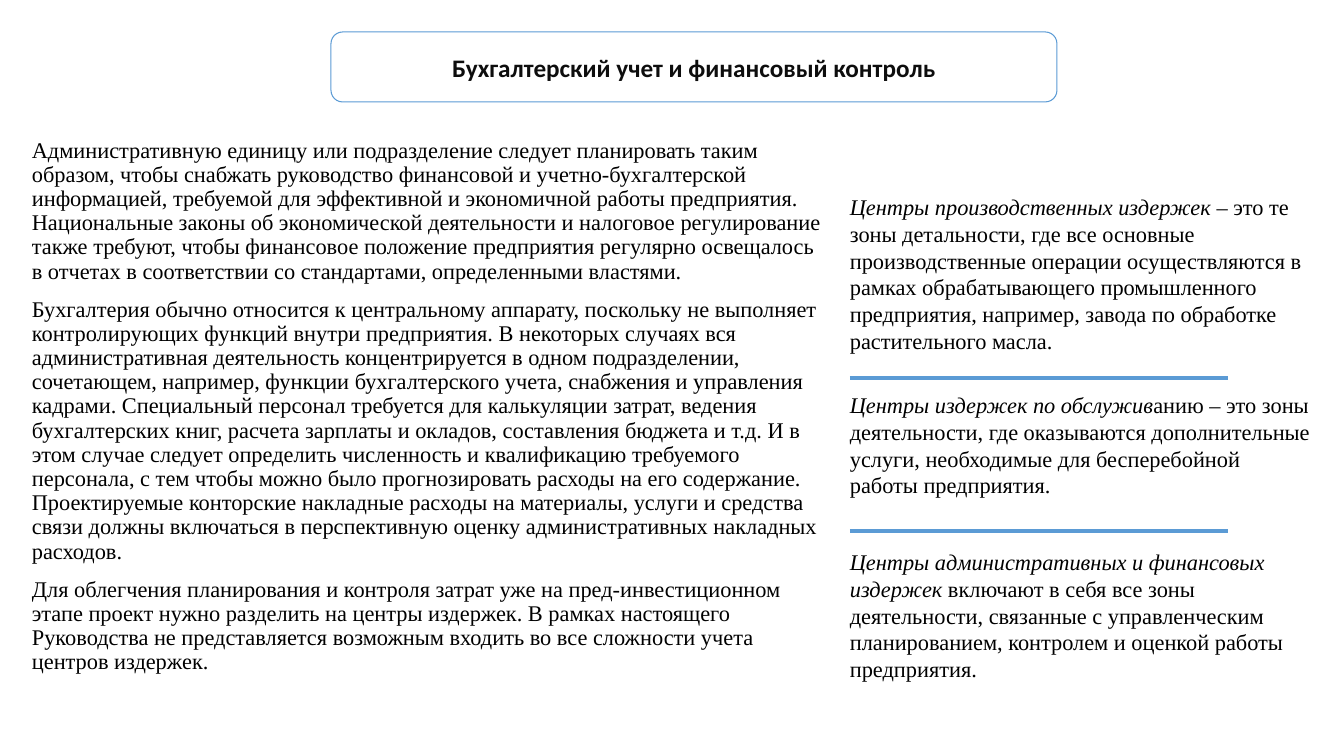
from lxml import etree
from pptx import Presentation
from pptx import util as u
from pptx.dml.color import RGBColor
from pptx.enum import shapes, text
from pptx.oxml.ns import qn

# Content
TITLE = "Бухгалтерский учет и финансовый контроль"
BODY = [
    "Административную единицу или подразделение следует планировать таким образом, чтобы снабжать "
    "руководство финансовой и учетно-бухгалтерской информацией, требуемой для эффективной и "
    "экономичной работы предприятия. Национальные законы об экономической деятельности и налоговое "
    "регулирование также требуют, чтобы финансовое положение предприятия регулярно освещалось в "
    "отчетах в соответствии со стандартами, определенными властями.",
    "Бухгалтерия обычно относится к центральному аппарату, поскольку не выполняет контролирующих "
    "функций внутри предприятия. В некоторых случаях вся административная деятельность "
    "концентрируется в одном подразделении, сочетающем, например, функции бухгалтерского учета, "
    "снабжения и управления кадрами. Специальный персонал требуется для калькуляции затрат, ведения "
    "бухгалтерских книг, расчета зарплаты и окладов, составления бюджета и т.д. И в этом случае "
    "следует определить численность и квалификацию требуемого персонала, с тем чтобы можно было "
    "прогнозировать расходы на его содержание. Проектируемые конторские накладные расходы на "
    "материалы, услуги и средства связи должны включаться в перспективную оценку административных "
    "накладных расходов.",
    "Для облегчения планирования и контроля затрат уже на пред-инвестиционном этапе проект нужно "
    "разделить на центры издержек. В рамках настоящего Руководства не представляется возможным "
    "входить во все сложности учета центров издержек.",
]
# Cost centres: top, width, height, term in italics, rest
CENTRES = [
    (188, 504, 173, "Центры производственных издержек",
     " – это те зоны детальности, где все основные производственные операции осуществляются в "
     "рамках обрабатывающего промышленного предприятия, например, завода по обработке "
     "растительного масла."),
    (386, 481, 119, "Центры издержек по обслужив",
     "анию – это зоны деятельности, где оказываются дополнительные услуги, необходимые для "
     "бесперебойной работы предприятия."),
    (543, 481, 173, "Центры административных и финансовых издержек",
     " включают в себя все зоны деятельности, связанные с управленческим планированием, контролем "
     "и оценкой работы предприятия."),
]
RULES = [378, 531]

# Format
BLACK = RGBColor(0x00, 0x00, 0x00)
DARK = RGBColor(0x0D, 0x0D, 0x0D)
BLUE = RGBColor(0x5B, 0x9B, 0xD5)
PLAIN = dict(name="Times New Roman", size=u.Pt(16), italic=False)
TERM = dict(PLAIN, italic=True)
HEAD = dict(name="Calibri", size=u.Pt(18), bold=True)
FRAME = (331, 32, 726, 70)
LEFT, RIGHT, INSET = 22, 840, 10
SCALE = 914400 / 100.8


def px(*vals):
    return [round(v * SCALE) for v in vals]


def style(font, form, color=BLACK):
    for key, val in form.items():
        setattr(font, key, val)
    font.color.rgb = color


def add_box(slide, *place):
    frame = slide.shapes.add_textbox(*px(*place)).text_frame
    frame.word_wrap = True
    return frame


def add_title(slide):
    card = slide.shapes.add_shape(shapes.MSO_SHAPE.ROUNDED_RECTANGLE, *px(*FRAME))
    card.shadow.inherit = False
    card.fill.background()
    card.line.color.rgb = BLUE
    card.line.width = u.Pt(0.75)

    title = slide.shapes.title
    title.left, title.top, title.width, title.height = px(*FRAME)
    frame = title.text_frame
    frame.text = TITLE
    frame.word_wrap = True
    frame.auto_size = text.MSO_AUTO_SIZE.NONE
    frame.vertical_anchor = text.MSO_ANCHOR.MIDDLE
    para = frame.paragraphs[0]
    para.alignment = text.PP_ALIGN.CENTER
    style(para.runs[0].font, HEAD, DARK)


def add_body(slide):
    frame = add_box(slide, LEFT, 134, 810, 590)
    for i, line in enumerate(BODY):
        para = frame.add_paragraph() if i else frame.paragraphs[0]
        para.line_spacing = 0.9
        para.space_before = u.Pt(10 if i else 0)
        run = para.add_run()
        run.text = line
        style(run.font, PLAIN)


def add_centres(slide):
    for top, width, height, term, rest in CENTRES:
        para = add_box(slide, RIGHT, top, width, height).paragraphs[0]
        for words, form in ((term, TERM), (rest, PLAIN)):
            run = para.add_run()
            run.text = words
            style(run.font, form)


def add_rules(slide):
    start = RIGHT + INSET
    for y in RULES:
        rule = slide.shapes.add_connector(
            shapes.MSO_CONNECTOR.STRAIGHT, *px(start, y, start + 378, y))
        rule.line.color.rgb = BLUE
        rule.line.width = u.Pt(3)
        etree.SubElement(rule._element.spPr, qn("a:effectLst"))


def main():
    deck = Presentation()
    deck.slide_width, deck.slide_height = px(1344, 756)
    slide = deck.slides.add_slide(deck.slide_layouts[5])
    add_title(slide)
    add_body(slide)
    add_centres(slide)
    add_rules(slide)
    deck.save("out.pptx")


if __name__ == "__main__":
    main()
